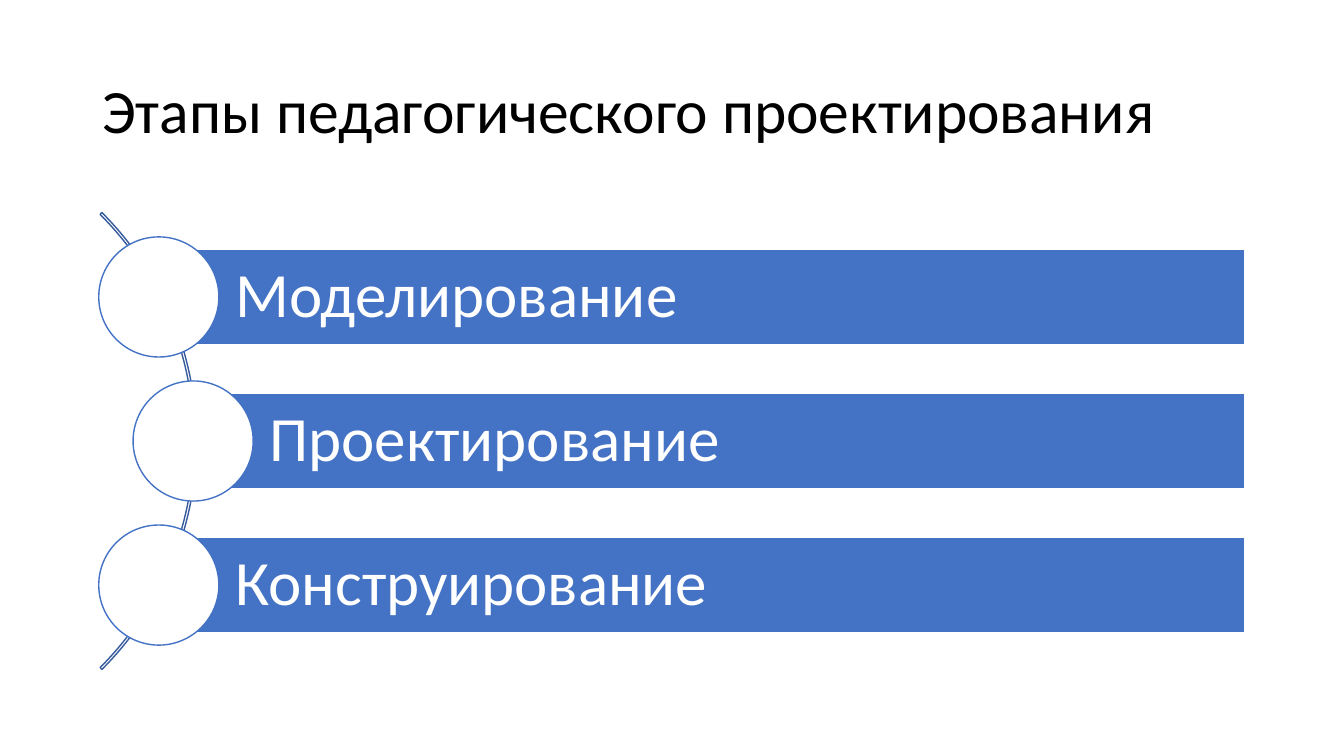
from math import sqrt
from pptx import Presentation
from pptx.dml.color import RGBColor
from pptx.enum.shapes import MSO_SHAPE
from pptx.enum.text import MSO_ANCHOR, PP_ALIGN
from pptx.util import Inches, Pt

ARC = MSO_SHAPE.BLOCK_ARC
RECT = MSO_SHAPE.RECTANGLE
OVAL = MSO_SHAPE.OVAL
LEFT = PP_ALIGN.LEFT
MIDDLE = MSO_ANCHOR.MIDDLE

COLS, ROWS = 160, 90
FONT = "Calibri"
BLUE, NAVY, WHITE, BLACK = "4472C4", "365B9D", "FFFFFF", "000000"

STAGES = ["Моделирование", "Проектирование", "Конструирование"]
HUB_X, HUB_Y = -15.06, 52.5
ARC_SIZE = 76.92
TRACK = 38.05
STEP = 17.15
BAR_END, BAR_HIGH = 148.2, 11.4
DOT = 14.3


def color(code):
    return RGBColor.from_string(code)


class Board:
    def __init__(self, deck):
        self.cell = deck.slide_width / COLS
        self.slide = deck.slides.add_slide(deck.slide_layouts[6])

    def span(self, *cells):
        return [round(self.cell * n) for n in cells]

    def label(self, shape, text, size, ink, pads, after=0):
        frame = shape.text_frame
        frame.text = text
        frame.word_wrap = True
        frame.vertical_anchor = MIDDLE
        (frame.margin_left, frame.margin_top,
         frame.margin_right, frame.margin_bottom) = self.span(*pads)
        line = frame.paragraphs[0]
        line.alignment = LEFT
        line.line_spacing = 0.9
        line.space_after = Pt(after)
        font = line.runs[0].font
        font.name, font.size = FONT, Pt(size)
        font.color.rgb = color(ink)

    def title(self, text, *box):
        shape = self.slide.shapes.add_textbox(*self.span(*box))
        self.label(shape, text, 44, BLACK, (1.2, 0.6, 1.2, 0.6))

    def shape(self, kind, box, edge, fill=None):
        shape = self.slide.shapes.add_shape(kind, *self.span(*box))
        shape.shadow.inherit = False
        shape.line.color.rgb = color(edge)
        shape.line.width = Pt(1)
        if fill:
            shape.fill.solid()
            shape.fill.fore_color.rgb = color(fill)
        else:
            shape.fill.background()
        return shape

    def square(self, kind, x, y, size, edge, fill=None):
        box = (x - size / 2, y - size / 2, size, size)
        return self.shape(kind, box, edge, fill)

    def arc(self):
        shape = self.square(ARC, HUB_X, HUB_Y, ARC_SIZE, NAVY)
        for i, value in enumerate((189, 27, 0.004)):
            shape.adjustments[i] = value

    def stage(self, text, shift):
        x = HUB_X + sqrt(TRACK ** 2 - shift ** 2)
        y = HUB_Y + shift
        box = (x, y - BAR_HIGH / 2, BAR_END - x, BAR_HIGH)
        bar = self.shape(RECT, box, WHITE, BLUE)
        self.label(bar, text, 45, WHITE, (9.1, 1.4, 1.4, 1.4), 15.75)
        self.square(OVAL, x, y, DOT, BLUE, WHITE)


def main():
    deck = Presentation()
    deck.slide_width, deck.slide_height = Inches(COLS / 12), Inches(ROWS / 12)
    board = Board(deck)
    board.title("Этапы педагогического проектирования", 11, 4.8, 138, 17.4)
    board.arc()
    for i, text in enumerate(STAGES):
        board.stage(text, (i - 1) * STEP)
    deck.save("out.pptx")


if __name__ == "__main__":
    main()
